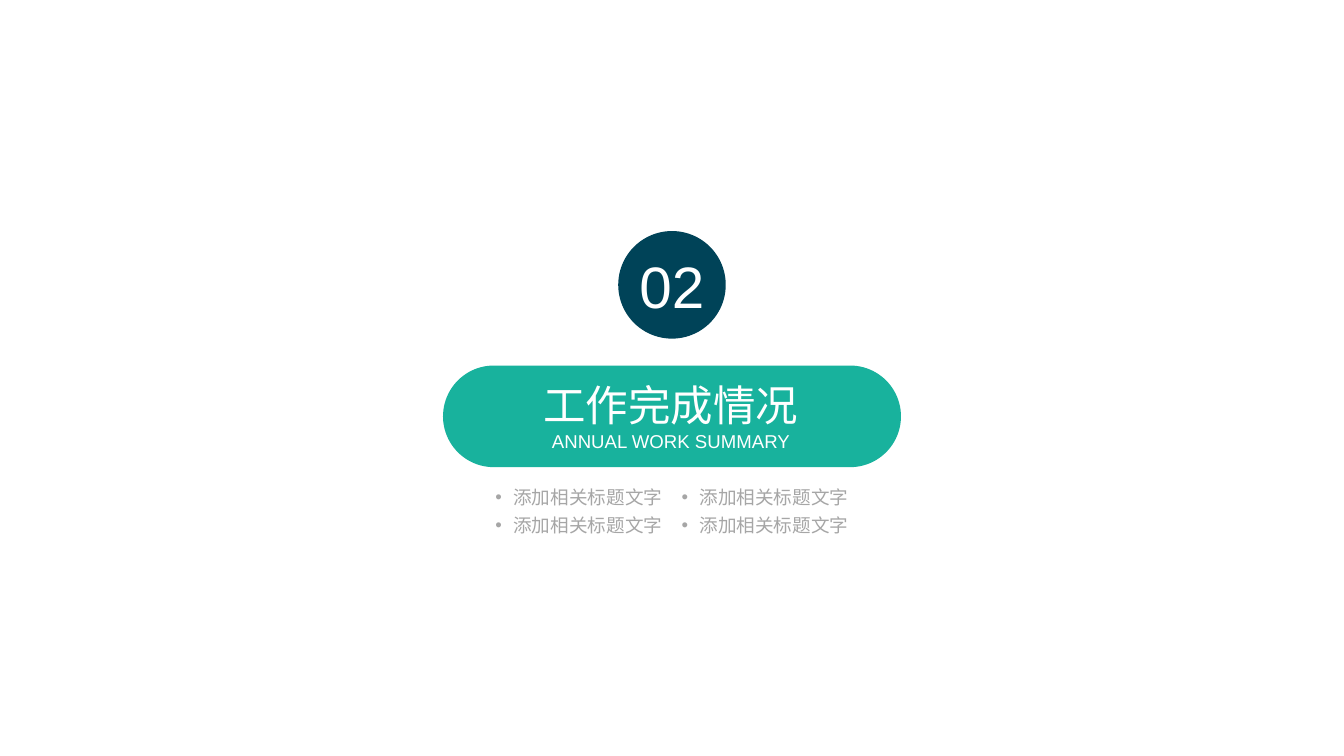
from dataclasses import dataclass

from lxml import etree
from pptx import Presentation
from pptx.dml.color import RGBColor
from pptx.enum.shapes import MSO_SHAPE
from pptx.enum.text import MSO_ANCHOR, MSO_AUTO_SIZE, PP_ALIGN
from pptx.oxml.ns import qn
from pptx.util import Emu, Pt

PX = 9525
SLIDE_W, SLIDE_H = 1350, 759
TITLE_ONLY = 5
FONT = "Arial"
COLORS = {"teal": "18B29D", "navy": "004358", "white": "FFFFFF", "grey": "A6A6A6"}

CENTER = PP_ALIGN.CENTER
MIDDLE = MSO_ANCHOR.MIDDLE
TOP = MSO_ANCHOR.TOP
NO_AUTOFIT = MSO_AUTO_SIZE.NONE
OVAL = MSO_SHAPE.OVAL
ROUNDED = MSO_SHAPE.ROUNDED_RECTANGLE

BULLET_TEXT = "添加相关标题文字"
BULLET_INDENT = 18
BULLET_COLUMNS = (497, 684)
BULLET_ROWS = (488, 516)
BULLET_W, BULLET_H = 169, 23


@dataclass(frozen=True)
class Box:
    left: int
    top: int
    width: int
    height: int

    def emu(self) -> tuple[Emu, Emu, Emu, Emu]:
        return (Emu(self.left * PX), Emu(self.top * PX),
                Emu(self.width * PX), Emu(self.height * PX))


PILL = Box(445, 367, 460, 102)
BADGE = Box(621, 232, 108, 108)
TITLE = Box(541, 380, 266, 74)


def add_filled(slide, kind: MSO_SHAPE, box: Box, color: str):
    sp = slide.shapes.add_shape(kind, *box.emu())
    sp.shadow.inherit = False
    sp.fill.solid()
    sp.fill.fore_color.rgb = RGBColor.from_string(COLORS[color])
    sp.line.fill.background()
    return sp


def set_frame(tf, anchor: MSO_ANCHOR, wrap: bool) -> None:
    tf.margin_left = tf.margin_top = tf.margin_right = tf.margin_bottom = 0
    tf.vertical_anchor = anchor
    tf.word_wrap = wrap
    tf.auto_size = NO_AUTOFIT


def style_run(r, size: int, color: str) -> None:
    r.font.name = FONT
    r.font.size = Pt(size)
    r.font.color.rgb = RGBColor.from_string(COLORS[color])


def add_badge(slide, number: str) -> None:
    sp = add_filled(slide, OVAL, BADGE, "navy")
    tf = sp.text_frame
    set_frame(tf, MIDDLE, True)
    tf.text = number
    p = tf.paragraphs[0]
    p.alignment = CENTER
    style_run(p.runs[0], 44, "white")


def place_title(slide, heading: str, subheading: str) -> None:
    """Put the title on top of the pill; its width wraps the subheading."""
    sp = slide.shapes.title
    slide.shapes._spTree.append(sp._element)
    sp.left, sp.top, sp.width, sp.height = TITLE.emu()
    tf = sp.text_frame
    set_frame(tf, MIDDLE, True)
    tf.text = heading
    p = tf.paragraphs[0]
    p.alignment = CENTER
    style_run(p.runs[0], 32, "white")
    r = p.add_run()
    r.text = subheading
    style_run(r, 14, "white")


def add_bullet(slide, box: Box, text: str) -> None:
    tf = slide.shapes.add_textbox(*box.emu()).text_frame
    set_frame(tf, TOP, False)
    tf.text = text
    p = tf.paragraphs[0]
    p.alignment = CENTER
    style_run(p.runs[0], 14, "grey")
    props = p._p.get_or_add_pPr()
    props.set("marL", str(BULLET_INDENT * PX))
    props.set("indent", str(-BULLET_INDENT * PX))
    etree.SubElement(props, qn("a:buFont"), typeface=FONT)
    etree.SubElement(props, qn("a:buChar"), char="•")


def main() -> None:
    prs = Presentation()
    prs.slide_width, prs.slide_height = Emu(SLIDE_W * PX), Emu(SLIDE_H * PX)
    slide = prs.slides.add_slide(prs.slide_layouts[TITLE_ONLY])

    pill = add_filled(slide, ROUNDED, PILL, "teal")
    pill.adjustments[0] = 0.5
    add_badge(slide, "02")
    place_title(slide, "工作完成情况", "ANNUAL WORK SUMMARY")
    for top in BULLET_ROWS:
        for left in BULLET_COLUMNS:
            add_bullet(slide, Box(left, top, BULLET_W, BULLET_H), BULLET_TEXT)

    prs.save("out.pptx")


if __name__ == "__main__":
    main()
